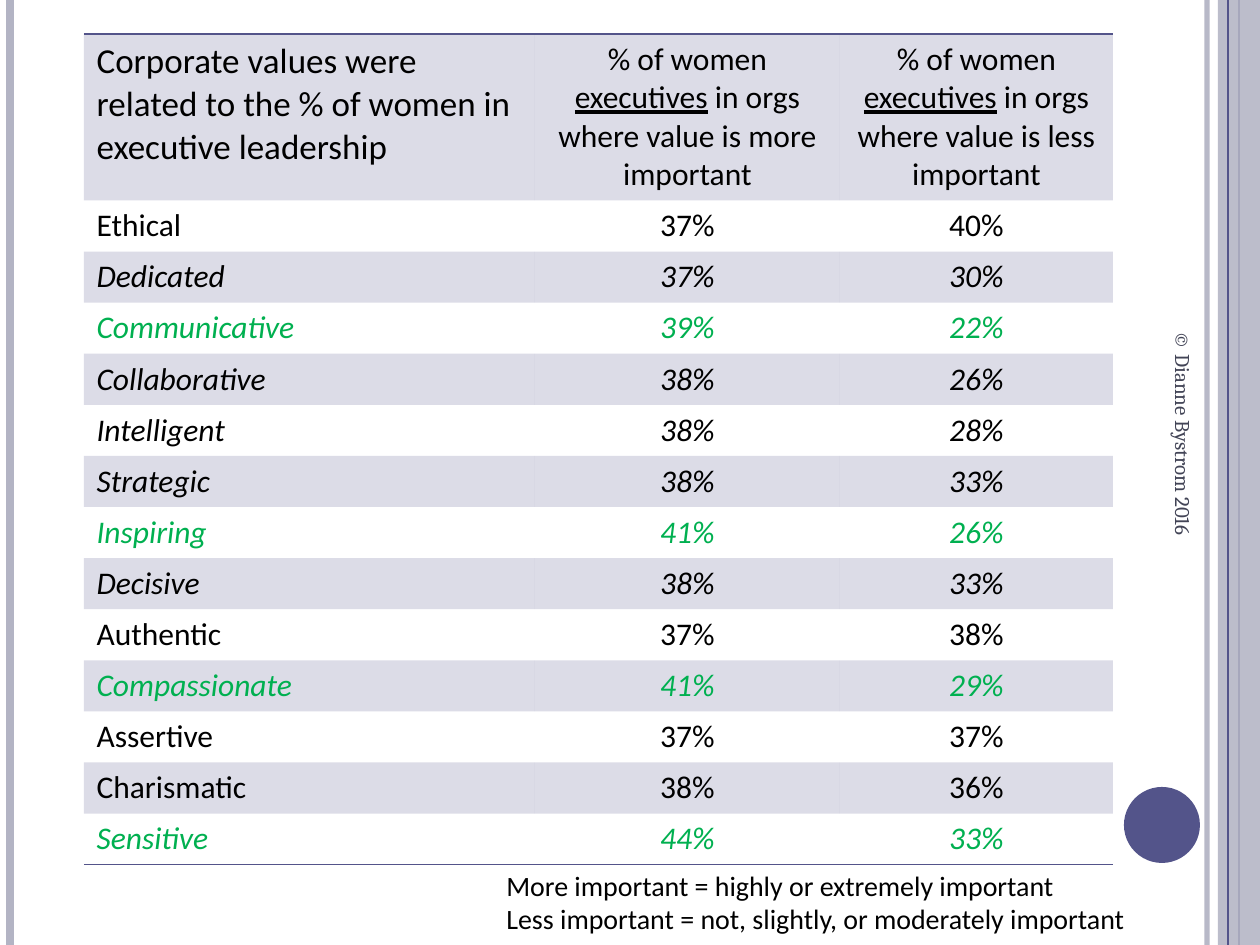
from lxml import etree
from pptx import Presentation, util as u
from pptx.dml.color import RGBColor
from pptx.enum import shapes, text
from pptx.oxml.ns import qn

PX = u.Inches(1) // 126
COLORS = {"indigo": "53548A", "lilac": "B3B4C4", "slate": "424456",
          "black": "000000", "green": "00B050"}
NO_TABLE_STYLE = "{2D5ABB26-0587-4C30-8999-92F81FD0307C}"

# Runs between underscores are underlined
HEADERS = [
    "Corporate values were related to the % of women in executive leadership",
    "% of women _executives_ in orgs where value is more important",
    "% of women _executives_ in orgs where value is less important",
]
PLAIN = {"color": "black", "italic": False}
ITALIC = {"color": "black", "italic": True}
GREEN = {"color": "green", "italic": True}
VALUES = [
    ("Ethical", "37%", "40%", PLAIN),
    ("Dedicated", "37%", "30%", ITALIC),
    ("Communicative", "39%", "22%", GREEN),
    ("Collaborative", "38%", "26%", ITALIC),
    ("Intelligent", "38%", "28%", ITALIC),
    ("Strategic", "38%", "33%", ITALIC),
    ("Inspiring", "41%", "26%", GREEN),
    ("Decisive", "38%", "33%", ITALIC),
    ("Authentic", "37%", "38%", PLAIN),
    ("Compassionate", "41%", "29%", GREEN),
    ("Assertive", "37%", "37%", PLAIN),
    ("Charismatic", "38%", "36%", PLAIN),
    ("Sensitive", "44%", "33%", GREEN),
]
FOOTNOTES = ["More important = highly or extremely important",
             "Less important = not, slightly, or moderately important"]
CREDIT = "© Dianne Bystrom 2016"

SLIDE_W, SLIDE_H = 1260, 945
TABLE_LEFT, TABLE_TOP = 84, 34
COLUMN_WIDTHS = [451, 305, 273]
HEADER_H, ROW_H = 166, 51
# x, width in points, colour, opacity in percent
STRIPES_BEHIND = [(1207, 3, "lilac", 93), (10, 4.5, "lilac", 100), (1239, 1.5, "indigo", 100)]
STRIPES_FRONT = [(1228, 0.75, "indigo", 100)]


def px(*lengths):
    return [length * PX for length in lengths]


def rgb(name):
    return RGBColor.from_string(COLORS[name])


def set_opacity(properties, percent):
    for color in properties.iter(qn("a:srgbClr")):
        etree.SubElement(color, qn("a:alpha"), val=str(percent * 1000))


def add_stripe(slide, x, width, color, opacity):
    stripe = slide.shapes.add_connector(shapes.MSO_CONNECTOR.STRAIGHT, *px(x, 0, x, SLIDE_H))
    stripe.line.width = u.Pt(width)
    stripe.line.color.rgb = rgb(color)
    properties = stripe.element.spPr
    if opacity < 100:
        set_opacity(properties, opacity)
    etree.SubElement(properties, qn("a:effectLst"))


def add_solid(slide, kind, box, color, opacity=100):
    solid = slide.shapes.add_shape(kind, *px(*box))
    solid.shadow.inherit = False
    solid.fill.solid()
    solid.fill.fore_color.rgb = rgb(color)
    solid.line.fill.background()
    if opacity < 100:
        set_opacity(solid.element.spPr, opacity)


def write(frame, *lines, size=18, font="Calibri", color="black", italic=False,
          align=text.PP_ALIGN.LEFT):
    for number, line in enumerate(lines):
        paragraph = frame.add_paragraph() if number else frame.paragraphs[0]
        paragraph.alignment = align
        for part, words in enumerate(line.split("_")):
            run = paragraph.add_run()
            run.text = words
            run.font.size = u.Pt(size)
            run.font.name = font
            run.font.color.rgb = rgb(color)
            run.font.italic = italic
            run.font.underline = part % 2 == 1


def add_cell_border(cell, side):
    border = etree.Element(qn(f"a:{side}"), w=str(u.Pt(1)))
    fill = etree.SubElement(border, qn("a:solidFill"))
    etree.SubElement(fill, qn("a:srgbClr"), val=COLORS["indigo"])
    cell._tc.get_or_add_tcPr().insert(0, border)


def add_values_table(slide):
    rows = [(HEADERS, PLAIN)] + [(row[:3], row[3]) for row in VALUES]
    height = HEADER_H + ROW_H * len(VALUES)
    frame = slide.shapes.add_table(len(rows), len(HEADERS),
                                   *px(TABLE_LEFT, TABLE_TOP, sum(COLUMN_WIDTHS), height))
    table = frame.table
    table.first_row = table.horz_banding = False
    next(frame.element.iter(qn("a:tableStyleId"))).text = NO_TABLE_STYLE
    for column, width in zip(table.columns, COLUMN_WIDTHS):
        column.width = width * PX
    for r, (words, style) in enumerate(rows):
        table.rows[r].height = (ROW_H if r else HEADER_H) * PX
        for c, word in enumerate(words):
            cell = table.cell(r, c)
            write(cell.text_frame, word, size=20 if r == c == 0 else 18,
                  align=text.PP_ALIGN.CENTER if c else text.PP_ALIGN.LEFT, **style)
            if r % 2:
                cell.fill.background()
            else:
                cell.fill.solid()
                cell.fill.fore_color.rgb = rgb("indigo")
                set_opacity(cell._tc.tcPr, 20)
            if r == 0:
                add_cell_border(cell, "lnT")
            if r == len(rows) - 1:
                add_cell_border(cell, "lnB")


def main():
    deck = Presentation()
    deck.slide_width, deck.slide_height = px(SLIDE_W, SLIDE_H)
    slide = deck.slides.add_slide(deck.slide_layouts[6])

    for stripe in STRIPES_BEHIND:
        add_stripe(slide, *stripe)
    add_solid(slide, shapes.MSO_SHAPE.RECTANGLE, (1218, 0, 42, SLIDE_H), "lilac", 87)
    for stripe in STRIPES_FRONT:
        add_stripe(slide, *stripe)
    add_solid(slide, shapes.MSO_SHAPE.OVAL, (1124, 787, 76, 76), "indigo")

    add_values_table(slide)

    footnote = slide.shapes.add_textbox(*px(494, 862, 651, 81)).text_frame
    footnote.word_wrap = False
    footnote.auto_size = text.MSO_AUTO_SIZE.SHAPE_TO_FIT_TEXT
    write(footnote, *FOOTNOTES, size=16)

    credit = slide.shapes.add_textbox(*px(963, 515, 441, 50))
    credit.rotation = 90
    credit.text_frame.word_wrap = True
    credit.text_frame.vertical_anchor = text.MSO_ANCHOR.MIDDLE
    write(credit.text_frame, CREDIT, size=12, font="Cambria", color="slate")

    deck.save("out.pptx")


if __name__ == "__main__":
    main()
